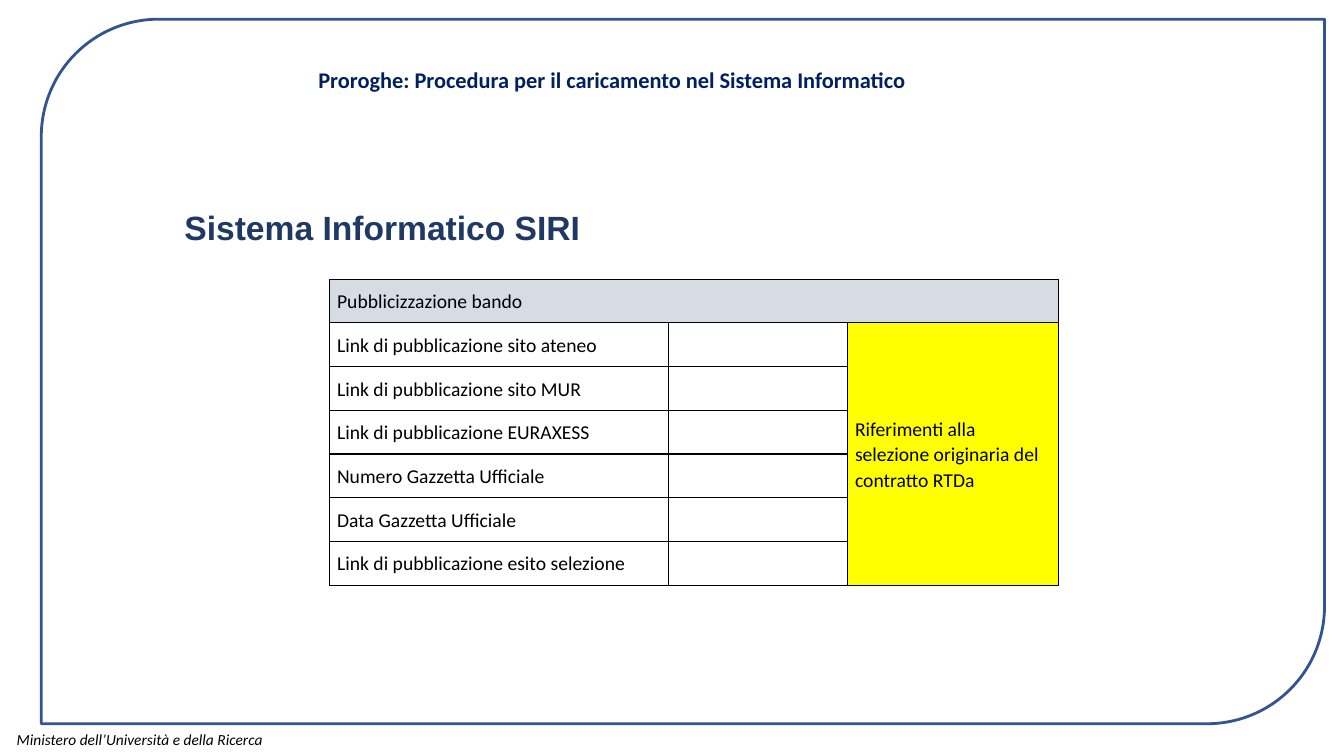
from dataclasses import dataclass

from lxml import etree
from pptx import Presentation
from pptx import util as u
from pptx.dml.color import RGBColor
from pptx.enum import shapes, text
from pptx.oxml.ns import qn


@dataclass(frozen=True)
class Theme:
    heading_font: str = "Arial"
    body_font: str = "Calibri"
    black: str = "000000"
    navy: str = "002060"
    heading_blue: str = "203864"
    frame_blue: str = "325491"
    header_grey: str = "D5DCE4"
    highlight: str = "FFFF00"
    footer_size: int = 11
    table_size: int = 14
    title_size: int = 16
    heading_size: int = 24


THEME = Theme()
LINKS = [
    "Link di pubblicazione sito ateneo",
    "Link di pubblicazione sito MUR",
    "Link di pubblicazione EURAXESS",
    "Numero Gazzetta Ufficiale",
    "Data Gazzetta Ufficiale",
    "Link di pubblicazione esito selezione",
]
COLUMN_WIDTHS = [242, 128, 151]
ROW_HEIGHT = 31.25


def format_runs(paragraph, size, color, font=THEME.body_font, bold=False, italic=False):
    for run in paragraph.runs:
        run.font.name = font
        run.font.size = u.Pt(size)
        run.font.bold = bold
        run.font.italic = italic
        run.font.color.rgb = RGBColor.from_string(color)


def add_text(slide, box, words, size, color, wrap=True, align=text.PP_ALIGN.LEFT, **style):
    shape = slide.shapes.add_textbox(*map(u.Pt, box))
    frame = shape.text_frame
    frame.word_wrap = wrap
    frame.text = words
    paragraph = frame.paragraphs[0]
    paragraph.alignment = align
    format_runs(paragraph, size, color, **style)


def add_frame(slide):
    box = map(u.Pt, (29.5, 13.7, 916.6, 503.3))
    shape = slide.shapes.add_shape(shapes.MSO_SHAPE.ROUND_2_DIAG_RECTANGLE, *box)
    shape.shadow.inherit = False
    shape.fill.background()
    shape.line.color.rgb = RGBColor.from_string(THEME.frame_blue)
    shape.line.width = u.Pt(2)


def add_borders(cell):
    properties = cell._tc.get_or_add_tcPr()
    for side in ("a:lnL", "a:lnR", "a:lnT", "a:lnB"):
        line = etree.SubElement(properties, qn(side), w=str(u.Pt(1)))
        fill = etree.SubElement(line, qn("a:solidFill"))
        etree.SubElement(fill, qn("a:srgbClr"), val=THEME.black)


def fill_cell(cell, words, color=None, align=text.PP_ALIGN.JUSTIFY):
    cell.text_frame.text = words
    paragraph = cell.text_frame.paragraphs[0]
    paragraph.alignment = align
    paragraph.line_spacing = 1.07
    format_runs(paragraph, THEME.table_size, THEME.black)
    if color:
        cell.fill.solid()
        cell.fill.fore_color.rgb = RGBColor.from_string(color)


def add_publication_table(slide):
    row_count = len(LINKS) + 1
    box = map(u.Pt, (235.4, 199.4, sum(COLUMN_WIDTHS), ROW_HEIGHT * row_count))
    table = slide.shapes.add_table(row_count, len(COLUMN_WIDTHS), *box).table
    table.first_row = False
    table.horz_banding = False
    for column, width in zip(table.columns, COLUMN_WIDTHS):
        column.width = u.Pt(width)
    for row in table.rows:
        row.height = u.Pt(ROW_HEIGHT)
    for cell in table.iter_cells():
        cell.margin_left = cell.margin_right = u.Pt(5.4)
        cell.margin_top = cell.margin_bottom = 0
        cell.vertical_anchor = text.MSO_ANCHOR.MIDDLE
        add_borders(cell)
        cell.fill.background()
    table.cell(0, 0).merge(table.cell(0, 2))
    table.cell(1, 2).merge(table.cell(row_count - 1, 2))
    fill_cell(table.cell(0, 0), "Pubblicizzazione bando", THEME.header_grey)
    for index, link in enumerate(LINKS, start=1):
        fill_cell(table.cell(index, 0), link)
    fill_cell(table.cell(1, 2), "Riferimenti alla selezione originaria del contratto RTDa",
              THEME.highlight, text.PP_ALIGN.LEFT)


def main():
    presentation = Presentation()
    presentation.slide_width = u.Pt(960)
    presentation.slide_height = u.Pt(540)
    slide = presentation.slides.add_slide(presentation.slide_layouts[6])
    add_text(slide, (0, 518, 195, 20), "Ministero dell’Università e della Ricerca",
             THEME.footer_size, THEME.black, align=text.PP_ALIGN.RIGHT, italic=True)
    add_text(slide, (124.6, 144, 300, 36), "Sistema Informatico SIRI", THEME.heading_size,
             THEME.heading_blue, wrap=False, font=THEME.heading_font, bold=True)
    add_text(slide, (220.3, 43.9, 480, 26.6),
             "Proroghe: Procedura per il caricamento nel Sistema Informatico",
             THEME.title_size, THEME.navy, bold=True)
    add_frame(slide)
    add_publication_table(slide)
    presentation.save("out.pptx")


if __name__ == "__main__":
    main()
